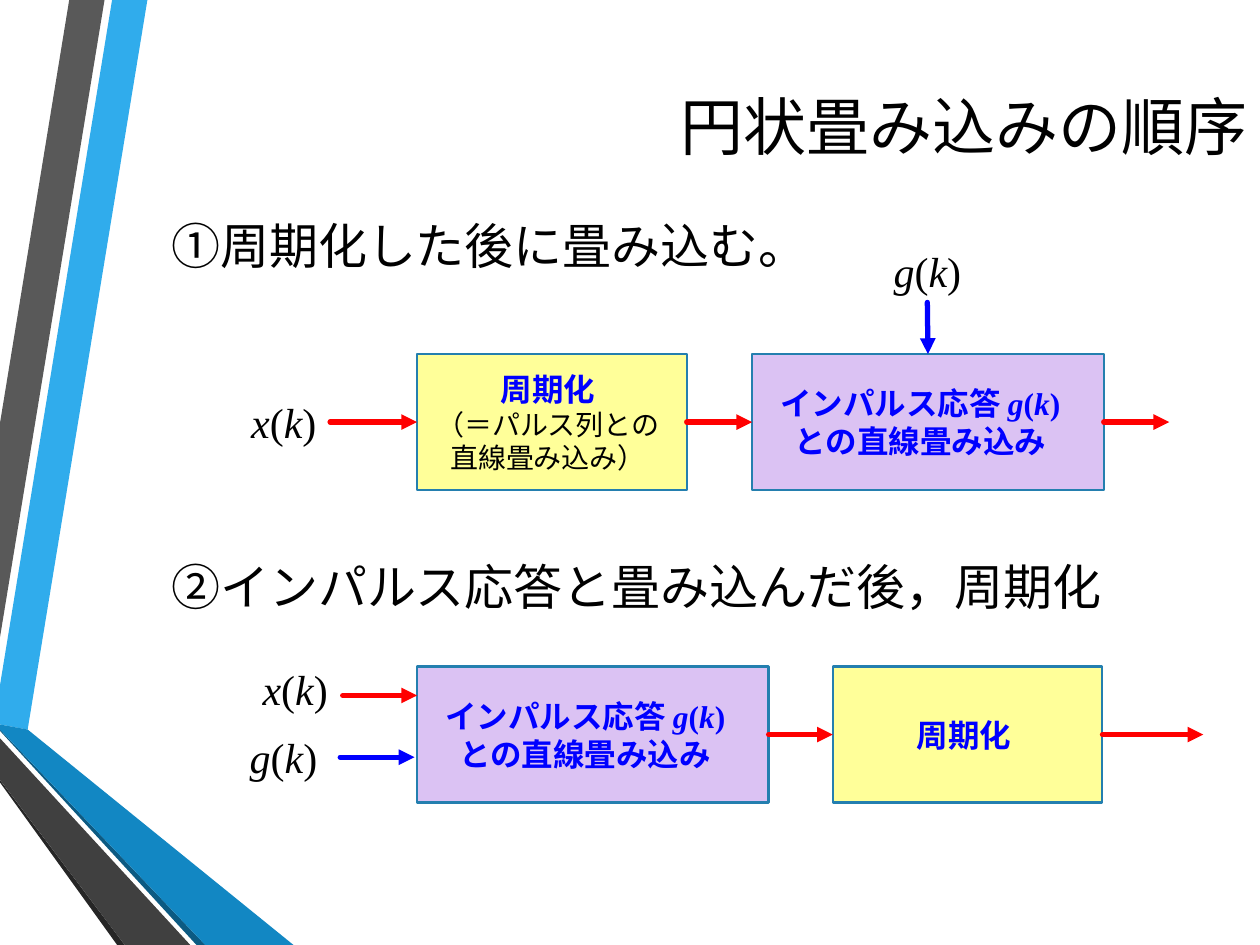
"""Build a slide on the order of circular convolution."""
from dataclasses import dataclass
from itertools import groupby
from typing import NamedTuple, Optional

from lxml.etree import SubElement
from pptx import Presentation
from pptx.dml.color import RGBColor
from pptx.enum.shapes import MSO_CONNECTOR, MSO_SHAPE
from pptx.enum.text import MSO_ANCHOR, MSO_AUTO_SIZE, PP_ALIGN
from pptx.oxml.ns import qn
from pptx.util import Inches, Pt

COLS, ROWS, CELL = 100, 75, 0.1
TOP, LEFT, RIGHT = 0, 1, 3


@dataclass(frozen=True)
class Theme:
    """Colours, fonts and type sizes."""
    ink: str = "000000"
    blue: str = "0000FF"
    red: str = "FF0000"
    edge: str = "247FAF"
    lemon: str = "FFFF99"
    lilac: str = "DBC2F3"
    sans: str = "Calibri"
    serif: str = "Times New Roman"
    title: int = 36
    head: int = 28
    sign: int = 24
    term: int = 18
    note: int = 16


class Block(NamedTuple):
    """A box of the flow, with its bold lines and an optional note."""
    name: str
    col: float
    row: float
    width: float
    fill: str
    lines: tuple
    note: str = ""
    inset: float = 1.6


class Label(NamedTuple):
    """A signal name beside an arrow."""
    text: str
    col: float
    row: float
    width: float
    align: PP_ALIGN


class Arrow(NamedTuple):
    """An arrow between two points, joined to blocks where named."""
    start: tuple
    end: tuple
    color: str
    source: Optional[tuple] = None
    target: Optional[tuple] = None


class Band(NamedTuple):
    """A filled polygon of the side decoration."""
    fill: str
    points: tuple


THEME = Theme()
HIGH, MID = 10.8, 5.4
UPPER, LOWER = 28.1, 52.9
WIDE, SLIM = 27.9, 21.4
FILTER = ("インパルス応答 g(k)", "との直線畳み込み")

BANDS = (
    Band("30ACEC", ((0, 54.4), (0, 57.5), (2.2, 57.9), (11.7, 0), (8.9, 0))),
    Band("595959", ((8.3, 0), (5.5, 0), (0, 33.6), (0, 50.6))),
    Band("262626", ((0, 61.9), (0, 62.1), (9.3, 75), (9.9, 75))),
    Band("0C5A82", ((0, 57.9), (0, 58), (15.6, 75), (16.3, 75))),
    Band("1287C3", ((0, 57.9), (16.3, 75), (23.3, 75), (2.2, 57.9), (0, 57.5))),
    Band("404040", ((0, 61.9), (9.9, 75), (15.1, 75), (0, 58.6))),
)
BLOCKS = (
    Block("cycle1", 33.1, UPPER, SLIM, THEME.lemon, ("周期化",),
          "（＝パルス列との直線畳み込み）"),
    Block("filter1", 59.7, UPPER, WIDE, THEME.lilac, FILTER, inset=2.2),
    Block("filter2", 33.1, LOWER, WIDE, THEME.lilac, FILTER, inset=2.2),
    Block("cycle2", 66.1, LOWER, SLIM, THEME.lemon, ("周期化",)),
)
LABELS = (
    Label("x(k)", 15.7, 31, 10.4, PP_ALIGN.RIGHT),
    Label("g(k)", 68.4, 19, 10.4, PP_ALIGN.CENTER),
    Label("x(k)", 16.6, 52.2, 10.4, PP_ALIGN.RIGHT),
    Label("g(k)", 17.9, 57.6, 9.2, PP_ALIGN.CENTER),
)
LINE1, LINE2 = UPPER + MID, LOWER + MID
ARROWS = (
    Arrow((26.2, LINE1), (33.1, LINE1), THEME.red, None, ("cycle1", LEFT)),
    Arrow((54.5, LINE1), (59.7, LINE1), THEME.red, ("cycle1", RIGHT), ("filter1", LEFT)),
    Arrow((87.6, LINE1), (92.8, LINE1), THEME.red, ("filter1", RIGHT)),
    Arrow((73.6, 24), (73.6, UPPER), THEME.blue, None, ("filter1", TOP)),
    Arrow((27.2, 55.2), (33.1, 55.2), THEME.red),
    Arrow((27, 60.1), (32.9, 60.1), THEME.blue),
    Arrow((61, LINE2), (66.1, LINE2), THEME.red, ("filter2", RIGHT), ("cycle2", LEFT)),
    Arrow((87.5, LINE2), (95.5, LINE2), THEME.red, ("cycle2", RIGHT)),
)


def grid(*cells: float) -> list:
    """Turn grid cells into lengths."""
    return [Inches(cell * CELL) for cell in cells]


def tint(hue: str) -> RGBColor:
    """Read a colour."""
    return RGBColor.from_string(hue)


def style(run, size: int, hue: str, face: str = THEME.serif, bold: bool = False) -> None:
    """Format one run."""
    font = run.font
    font.name, font.size, font.bold = face, Pt(size), bold
    font.color.rgb = tint(hue)


def write_math(para, text: str, size: int, hue: str, bold: bool = False) -> None:
    """Write a line whose variables are italic."""
    for slant, chars in groupby(text, lambda char: char in "xgk"):
        run = para.add_run()
        run.text = "".join(chars)
        style(run, size, hue, bold=bold)
        run.font.italic = slant


def draw_band(shapes, band: Band) -> None:
    """Draw one polygon of the decoration."""
    first, *rest = [grid(*point) for point in band.points]
    path = shapes.build_freeform(*first)
    path.add_line_segments(rest, close=True)
    shape = path.convert_to_shape()
    shape.shadow.inherit = False
    shape.fill.solid()
    shape.fill.fore_color.rgb = tint(band.fill)
    shape.line.fill.background()


def fill_holder(holder, place: tuple, lines: tuple, size: int, face: str,
                align: PP_ALIGN, gap: float = 0) -> None:
    """Move a placeholder and set its lines."""
    holder.left, holder.top, holder.width, holder.height = grid(*place)
    frame = holder.text_frame
    frame.text = "\n".join(lines)
    frame.auto_size = MSO_AUTO_SIZE.NONE
    for index, para in enumerate(frame.paragraphs):
        para.alignment = align
        para.space_before = Pt(gap if index else 0)
        props = para._p.get_or_add_pPr()
        props.set("marL", "0")
        props.set("indent", "0")
        SubElement(props, qn("a:buNone"))
        style(para.runs[0], size, THEME.ink, face)


def draw_block(shapes, block: Block):
    """Draw a box with its text and return it."""
    shape = shapes.add_shape(MSO_SHAPE.RECTANGLE,
                             *grid(block.col, block.row, block.width, HIGH))
    shape.shadow.inherit = False
    shape.fill.solid()
    shape.fill.fore_color.rgb = tint(block.fill)
    shape.line.color.rgb = tint(THEME.edge)
    shape.line.width = Pt(1.25)
    frame = shape.text_frame
    frame.word_wrap, frame.vertical_anchor = True, MSO_ANCHOR.MIDDLE
    frame.margin_left, frame.margin_right = grid(1, block.inset)
    frame.text = "\n" * (len(block.lines) - 1 + bool(block.note))
    for para, line in zip(frame.paragraphs, block.lines):
        write_math(para, line, THEME.term, THEME.blue, bold=True)
    if block.note:
        frame.paragraphs[-1].text = block.note
        style(frame.paragraphs[-1].runs[0], THEME.note, THEME.ink)
    for para in frame.paragraphs:
        para.alignment = PP_ALIGN.CENTER
    return shape


def draw_label(shapes, label: Label) -> None:
    """Draw a signal name."""
    box = shapes.add_textbox(*grid(label.col, label.row, label.width, 5))
    box.text_frame.word_wrap = True
    para = box.text_frame.paragraphs[0]
    para.alignment = label.align
    write_math(para, label.text, THEME.sign, THEME.ink)


def draw_arrow(shapes, arrow: Arrow, boxes: dict) -> None:
    """Draw an arrow and join it to its boxes."""
    link = shapes.add_connector(MSO_CONNECTOR.STRAIGHT, *grid(*arrow.start, *arrow.end))
    for join, goal in ((link.begin_connect, arrow.source), (link.end_connect, arrow.target)):
        if goal:
            join(boxes[goal[0]], goal[1])
    link.line.color.rgb = tint(arrow.color)
    link.line.width = Pt(3)
    line = link.line._get_or_add_ln()
    line.set("cap", "rnd")
    SubElement(line, qn("a:tailEnd"), type="triangle")
    SubElement(link._element.spPr, qn("a:effectLst"))


def main() -> None:
    """Build and save the slide."""
    deck = Presentation()
    deck.slide_width, deck.slide_height = grid(COLS, ROWS)
    slide = deck.slides.add_slide(deck.slide_layouts[1])
    shapes = slide.shapes
    title, body = slide.placeholders
    fill_holder(title, (15.7, 6.4, 84.3, 7.1), ("円状畳み込みの順序",),
                THEME.title, THEME.sans, PP_ALIGN.RIGHT)
    fill_holder(body, (12.6, 16.6, 84.7, 34),
                ("①周期化した後に畳み込む。", "②インパルス応答と畳み込んだ後，周期化"),
                THEME.head, THEME.serif, PP_ALIGN.LEFT, gap=161)
    for band in BANDS:
        draw_band(shapes, band)
    boxes = {block.name: draw_block(shapes, block) for block in BLOCKS}
    for label in LABELS:
        draw_label(shapes, label)
    for arrow in ARROWS:
        draw_arrow(shapes, arrow, boxes)
    deck.save("out.pptx")


if __name__ == "__main__":
    main()
